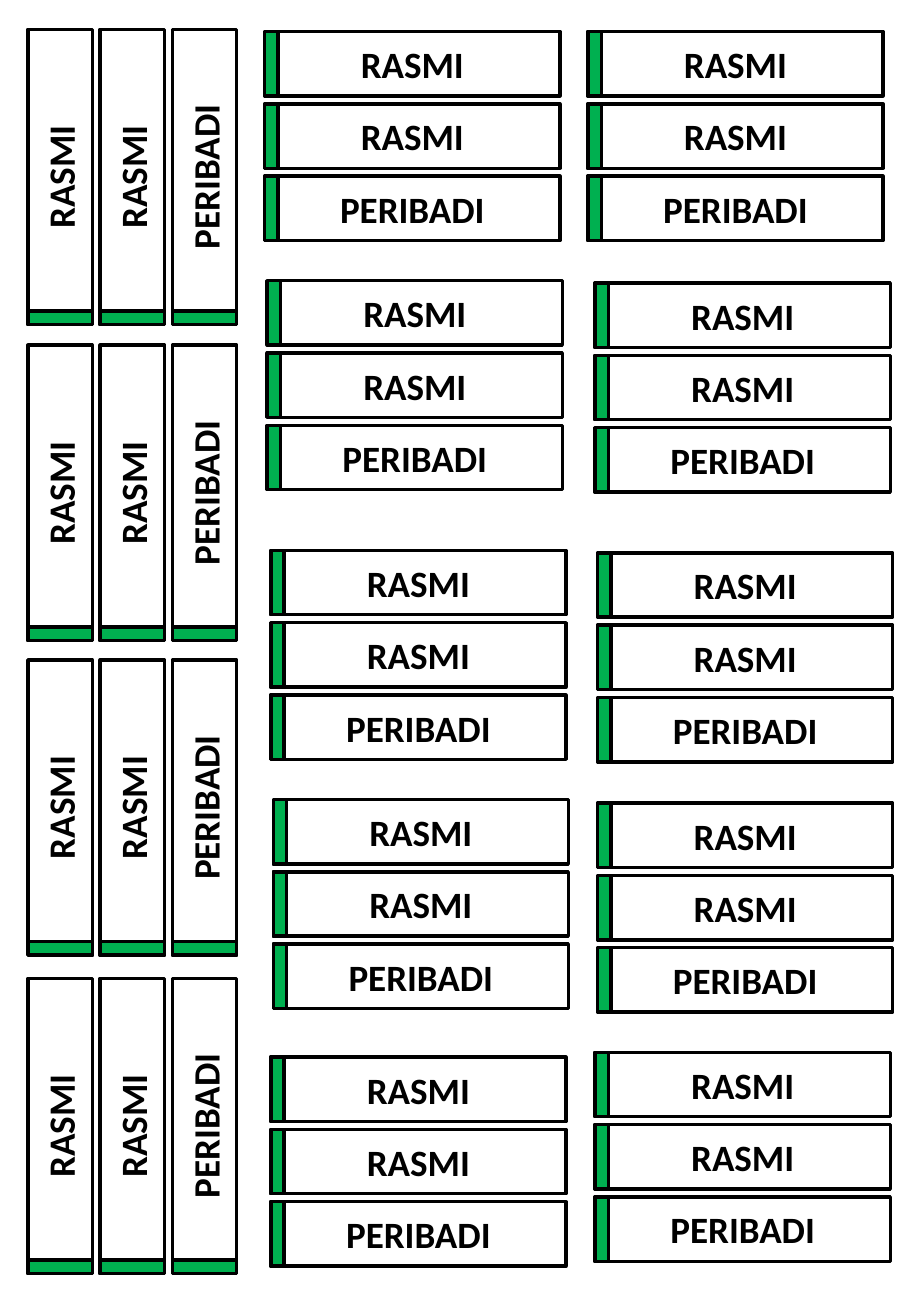
import pptx
import pptx.dml.color
import pptx.enum.shapes
import pptx.enum.text
import pptx.util

BLACK = pptx.dml.color.RGBColor(0x00, 0x00, 0x00)
GREEN = pptx.dml.color.RGBColor(0x00, 0xB0, 0x50)

WORDS = ["RASMI", "RASMI", "PERIBADI"]
LABEL_LENGTH, STRIP_LENGTH, THICKNESS = 2.43, 0.11, 0.53
PITCH = 0.595
STRIP_OFFSET = (LABEL_LENGTH - STRIP_LENGTH) / 2
LABEL_FONT = {"name": "Calibri", "size": pptx.util.Pt(22), "bold": True}

# Top edge of each upright set
UPRIGHT_LEFT = 0.23
UPRIGHT_TOPS = [0.24, 2.84, 5.43, 8.05]
# Left and top corner of each flat set, row by row
FLAT_CORNERS = [
    (2.18, 0.26), (4.84, 0.26),
    (2.20, 2.31), (4.90, 2.33),
    (2.23, 4.53), (4.92, 4.55),
    (2.25, 6.58), (4.92, 6.61),
    (2.23, 8.70), (4.90, 8.66),
]


def add_bar(label_set, center_x, center_y, length, rotation):
    """Add an outlined bar, placed by its centre so that turning keeps its place."""
    bar = label_set.shapes.add_shape(
        pptx.enum.shapes.MSO_SHAPE.RECTANGLE,
        pptx.util.Inches(center_x - length / 2),
        pptx.util.Inches(center_y - THICKNESS / 2),
        pptx.util.Inches(length),
        pptx.util.Inches(THICKNESS),
    )
    bar.rotation = rotation
    bar.shadow.inherit = False
    bar.line.color.rgb = BLACK
    bar.line.width = pptx.util.Pt(2)
    return bar


def add_label(label_set, word, center_x, center_y, upright):
    """Add one word in its frame, with the green strip at the frame's start."""
    rotation = 270 if upright else 0
    frame = add_bar(label_set, center_x, center_y, LABEL_LENGTH, rotation)
    frame.fill.background()
    frame.text_frame.vertical_anchor = pptx.enum.text.MSO_ANCHOR.MIDDLE
    paragraph = frame.text_frame.paragraphs[0]
    paragraph.alignment = pptx.enum.text.PP_ALIGN.CENTER
    run = paragraph.add_run()
    run.text = word
    for attribute, value in LABEL_FONT.items():
        setattr(run.font, attribute, value)
    run.font.color.rgb = BLACK

    if upright:
        center_y += STRIP_OFFSET
    else:
        center_x -= STRIP_OFFSET
    strip = add_bar(label_set, center_x, center_y, STRIP_LENGTH, rotation)
    strip.fill.solid()
    strip.fill.fore_color.rgb = GREEN


presentation = pptx.Presentation()
presentation.slide_width = pptx.util.Inches(7.5)
presentation.slide_height = pptx.util.Inches(10.83)
slide = presentation.slides.add_slide(presentation.slide_layouts[6])

for top in UPRIGHT_TOPS:
    upright_set = slide.shapes.add_group_shape()
    for column, word in enumerate(WORDS):
        center_x = UPRIGHT_LEFT + THICKNESS / 2 + column * PITCH
        add_label(upright_set, word, center_x, top + LABEL_LENGTH / 2, True)

for left, top in FLAT_CORNERS:
    flat_set = slide.shapes.add_group_shape()
    for row, word in enumerate(WORDS):
        center_y = top + THICKNESS / 2 + row * PITCH
        add_label(flat_set, word, left + LABEL_LENGTH / 2, center_y, False)

presentation.save("out.pptx")
